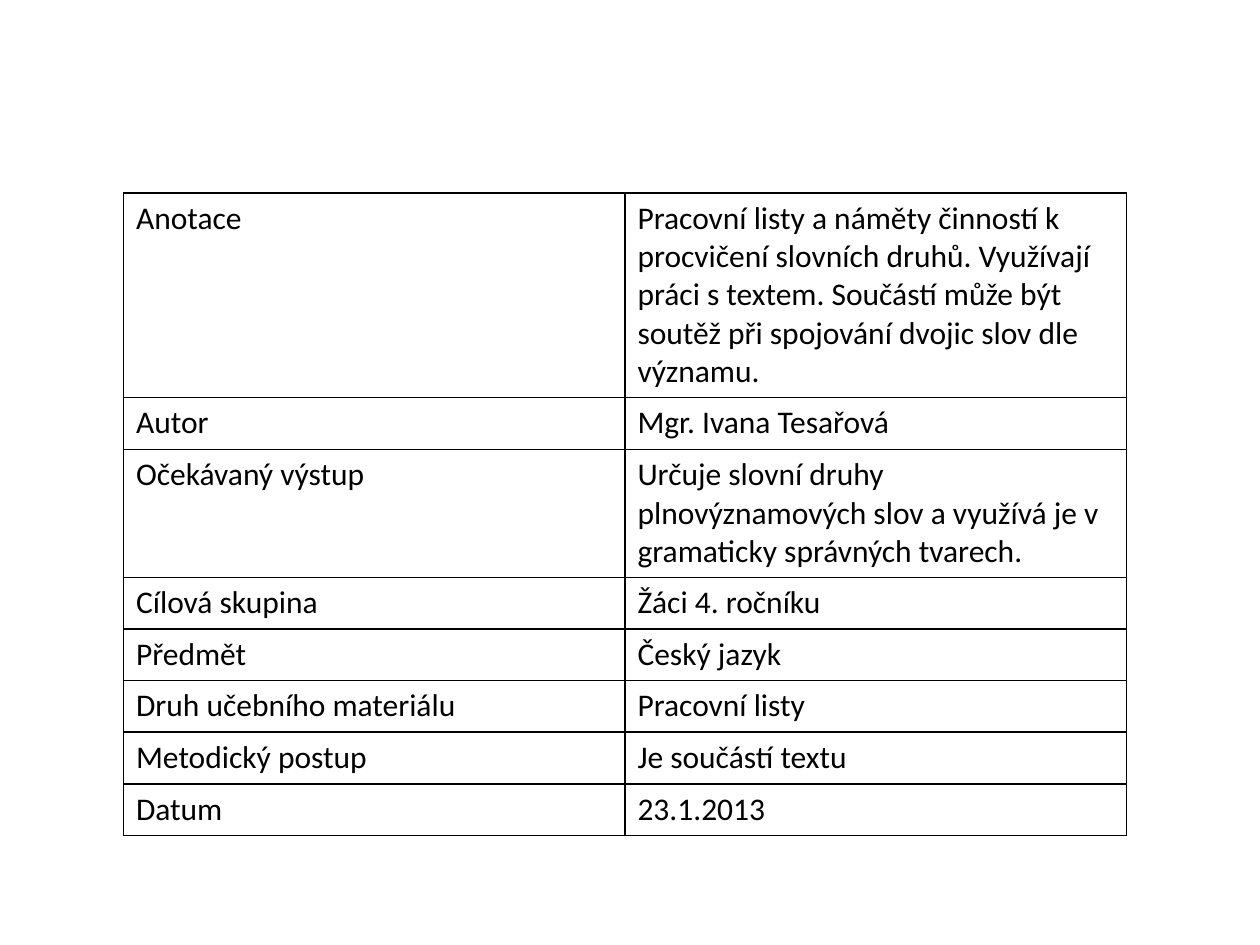
import pptx
import pptx.dml.color
import pptx.oxml
import pptx.oxml.ns
import pptx.util

SLIDE_W, SLIDE_H = 10, 7.5
COL_W, ROW_H = 3.98, 0.41
TABLE_LEFT, TABLE_TOP, TABLE_H = 0.98, 1.53, 5.03
TEXT_FORMAT = {"name": "Calibri", "size": pptx.util.Pt(18), "bold": False}
BLACK = "000000"

ROWS = [
    ("Anotace", "Pracovní listy a náměty činností k procvičení slovních druhů. "
                "Využívají práci s textem. Součástí může být soutěž při "
                "spojování dvojic slov dle významu."),
    ("Autor", "Mgr. Ivana Tesařová"),
    ("Očekávaný výstup", "Určuje slovní druhy plnovýznamových slov a využívá je v "
                         "gramaticky správných tvarech."),
    ("Cílová skupina", "Žáci 4. ročníku"),
    ("Předmět", "Český jazyk"),
    ("Druh učebního materiálu", "Pracovní listy"),
    ("Metodický postup", "Je součástí textu"),
    ("Datum", "23.1.2013"),
]


def color(hex_string):
    return pptx.dml.color.RGBColor.from_string(hex_string)


def set_borders(cell, hex_string, width):
    """Draw the same line on all four sides of a cell."""
    tc_pr = cell._tc.get_or_add_tcPr()
    for i, side in enumerate(("lnL", "lnR", "lnT", "lnB")):
        tc_pr.insert(i, pptx.oxml.parse_xml(
            f'<a:{side} {pptx.oxml.ns.nsdecls("a")} w="{pptx.util.Pt(width)}">'
            f'<a:solidFill><a:srgbClr val="{hex_string}"/></a:solidFill></a:{side}>'))


def fill_cell(cell, text):
    cell.fill.background()
    set_borders(cell, BLACK, 1)
    r = cell.text_frame.paragraphs[0].add_run()
    r.text = text
    for key, value in TEXT_FORMAT.items():
        setattr(r.font, key, value)
    r.font.color.rgb = color(BLACK)


def add_info_table(s, rows):
    n_cols = len(rows[0])
    size = (TABLE_LEFT, TABLE_TOP, n_cols * COL_W, len(rows) * ROW_H)
    sp = s.shapes.add_table(len(rows), n_cols, *map(pptx.util.Inches, size))
    table = sp.table
    table.first_row = table.horz_banding = False
    for row, texts in zip(table.rows, rows):
        for cell, text in zip(row.cells, texts):
            fill_cell(cell, text)
    # The frame is taller than the minimum rows, which grow with wrapped text
    sp.height = pptx.util.Inches(TABLE_H)


def main():
    prs = pptx.Presentation()
    prs.slide_width = pptx.util.Inches(SLIDE_W)
    prs.slide_height = pptx.util.Inches(SLIDE_H)
    s = prs.slides.add_slide(prs.slide_layouts[6])
    add_info_table(s, ROWS)
    prs.save("out.pptx")


if __name__ == "__main__":
    main()
